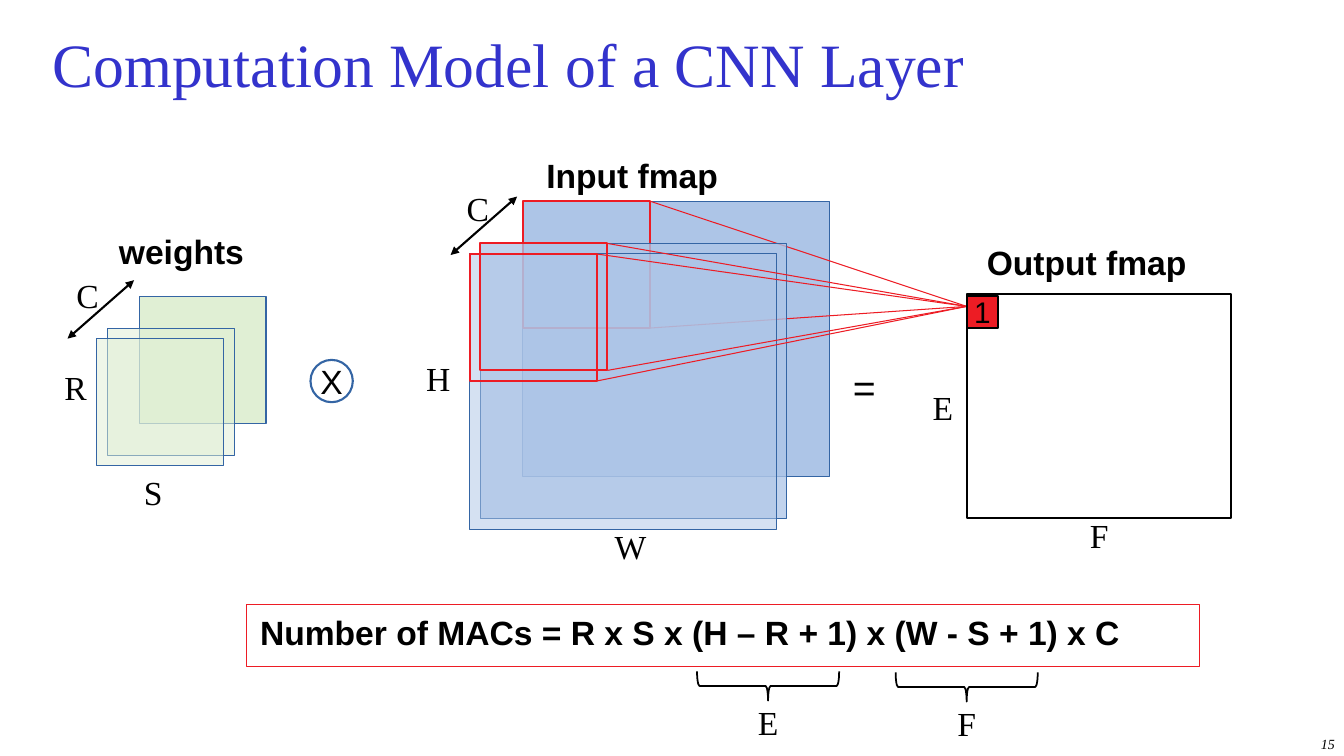
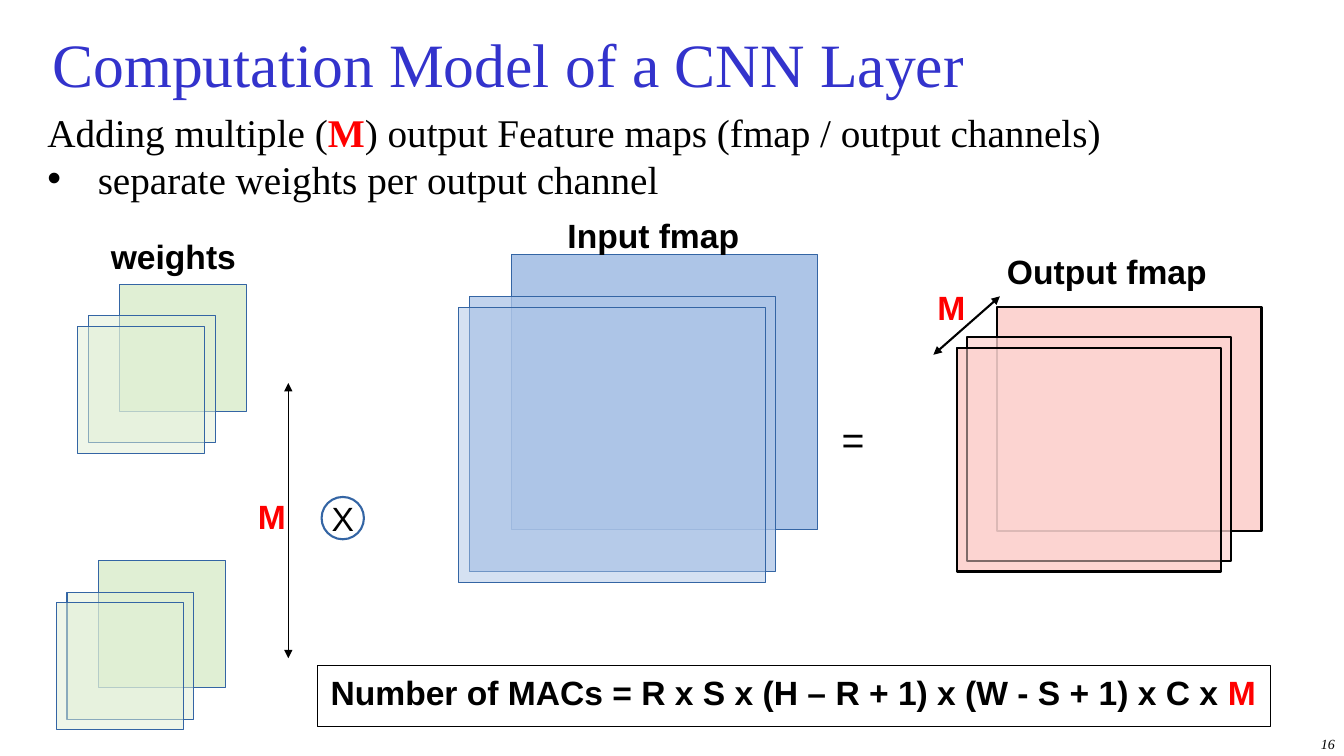
"""Builds two slides on the computation model of a convolutional layer."""
from lxml.etree import SubElement
from pptx import Presentation
from pptx.dml.color import RGBColor
from pptx.enum.shapes import MSO_CONNECTOR, MSO_SHAPE
from pptx.enum.text import MSO_ANCHOR, MSO_AUTO_SIZE, PP_ALIGN
from pptx.oxml.ns import qn
from pptx.util import Inches, Pt

BLACK, WHITE, RED, STRONG_RED = "000000", "FFFFFF", "ED1C24", "FF0000"
TITLE_BLUE, EDGE_BLUE = "3333CC", "3465A4"
MAP_BLUE, WEIGHT_GREEN, OUTPUT_PINK = "ADC5E7", "E0EFD4", "FCD4D1"
SANS, SERIF = "Arial", "Times New Roman"
COLUMNS, ROWS = 133.33, 75
MAP_SIZE, WEIGHT_SIZE, OUTPUT_SIZE = (30.4, 27.3), (12.6, 12.6), (26.2, 22.2)
MAP_DEPTH, WEIGHT_DEPTH, OUTPUT_DEPTH, MIDDLE_DEPTH = 5.25, 4.2, 4.05, 1.05
TARGET = (95.9, 30.4)
FORMULA = "Number of MACs = R x S x (H – R + 1) x (W - S + 1) x C"


def cells(*counts):
    """Turn counts of grid cells into lengths."""
    return [Inches(count / 10) for count in counts]


def paint(target, color):
    """Give a fill or font a solid colour."""
    if hasattr(target, "solid"):
        target.solid()
        target.fore_color.rgb = RGBColor.from_string(color)
    else:
        target.color.rgb = RGBColor.from_string(color)


def layers(left, top, depth):
    """List the corners of three stacked sheets from back to front."""
    return [(left + shift, top - shift) for shift in (depth, MIDDLE_DEPTH, 0)]


class Sketch:
    """Holds the deck, its style and the current page."""

    def __init__(self):
        self.deck = Presentation()
        self.deck.slide_width, self.deck.slide_height = cells(COLUMNS, ROWS)
        self.page = None

    def start(self, layout, title, number):
        """Add a page with its title and page number."""
        self.page = self.deck.slides.add_slide(self.deck.slide_layouts[layout])
        holder = self.page.shapes.title
        self.place(holder, 4.2, 2.5, 125.3, 7.5)
        holder.text_frame.vertical_anchor = MSO_ANCHOR.MIDDLE
        holder.text_frame.auto_size = MSO_AUTO_SIZE.NONE
        self.set_spans(holder.text_frame.paragraphs[0], [(title, TITLE_BLUE)], SERIF, 44)
        self.text((105.6, 72.5, 27.8, 2.5), [(str(number), BLACK)], SERIF, 10,
                  align=PP_ALIGN.RIGHT, italic=True)

    def place(self, shape, *area):
        """Move a shape to an area of the grid."""
        shape.left, shape.top, shape.width, shape.height = cells(*area)

    def set_spans(self, para, spans, face, size, align=PP_ALIGN.LEFT, bold=False, italic=False):
        """Fill a paragraph with coloured spans."""
        para.alignment = align
        font = para.font
        font.name, font.size, font.bold, font.italic = face, Pt(size), bold, italic
        paint(font, spans[0][1])
        for words, color in spans:
            span = para.add_run()
            span.text = words
            if color != spans[0][1]:
                paint(span.font, color)

    def text(self, area, spans, face=SERIF, size=24, **style):
        """Add a text box."""
        box = self.page.shapes.add_textbox(*cells(*area))
        self.fill_frame(box, spans, face, size, **style)

    def fill_frame(self, box, spans, face, size, **style):
        """Set the insets and text of a box."""
        frame = box.text_frame
        frame.word_wrap = True
        frame.vertical_anchor = MSO_ANCHOR.TOP
        if face == SANS:
            side, end = cells(1.3, 0.7)
            frame.margin_left = side
            frame.margin_right = side if style.get("align") else 0
            frame.margin_top = frame.margin_bottom = end
        self.set_spans(frame.paragraphs[0], spans, face, size, **style)

    def label(self, area, words, color=BLACK, **style):
        """Add a bold label."""
        self.text(area, [(words, color)], SANS, bold=True, **style)

    def dimension(self, left, top, letter, width=4.7, align=PP_ALIGN.LEFT):
        """Add the letter of a dimension."""
        self.text((left, top, width, 5), [(letter, BLACK)], align=align)

    def shape(self, area, fill=None, edge=EDGE_BLUE, weight=0.75,
              kind=MSO_SHAPE.RECTANGLE, opacity=100):
        """Add a preset shape."""
        shape = self.page.shapes.add_shape(kind, *cells(*area))
        shape.shadow.inherit = False
        if fill:
            paint(shape.fill, fill)
        else:
            shape.fill.background()
        if opacity < 100:
            color = shape.element.spPr.find(qn("a:solidFill"))[0]
            SubElement(color, qn("a:alpha")).set("val", str(opacity * 1000))
        paint(shape.line.fill, edge)
        shape.line.width = Pt(weight)
        return shape

    def badge(self, area, words, size, **style):
        """Add a small shape with centred text."""
        frame = self.shape(area, weight=1.5, **style).text_frame
        frame.word_wrap = False
        frame.vertical_anchor = MSO_ANCHOR.MIDDLE
        frame.margin_left = frame.margin_right = 0
        frame.margin_top = frame.margin_bottom = 0
        self.set_spans(frame.paragraphs[0], [(words, BLACK)], SANS, size, align=PP_ALIGN.CENTER)

    def stack(self, corners, size, fill, opacities, **style):
        """Draw sheets from back to front."""
        for corner, opacity in zip(corners, opacities):
            self.shape((*corner, *size), fill, opacity=opacity, **style)

    def line(self, start, end, color=BLACK, weight=0.75, arrows=False):
        """Draw a line, with arrowheads at both ends if asked."""
        line = self.page.shapes.add_connector(MSO_CONNECTOR.STRAIGHT, *cells(*start, *end))
        paint(line.line.fill, color)
        line.line.width = Pt(weight)
        properties = line.element.spPr
        if arrows:
            for tag in ("a:headEnd", "a:tailEnd"):
                SubElement(properties.find(qn("a:ln")), qn(tag)).set("type", "triangle")
        SubElement(properties, qn("a:effectLst"))

    def depth_arrow(self, left, bottom):
        """Draw the slanted arrow along a stack."""
        self.line((left, bottom), (left + 6.6, bottom - 5.8), weight=1.5, arrows=True)

    def window(self, left, top):
        """Outline a filter window and project it on the output."""
        width, height = WEIGHT_SIZE
        self.shape((left, top, width, height), edge=RED, weight=1.5)
        for corner_top in (top, top + height):
            self.line((left + width, corner_top), TARGET, RED)

    def weights(self, left, top):
        """Draw one stack of weights."""
        self.stack(layers(left, top, WEIGHT_DEPTH), WEIGHT_SIZE, WEIGHT_GREEN, (100, 50, 50))

    def operators(self, times, equals):
        """Add the convolution and equals signs."""
        self.badge((*times, 4.2, 4.2), "X", 24, fill=WHITE, kind=MSO_SHAPE.OVAL)
        self.text((*equals, 4.2, 5.6), [("=", BLACK)], SANS, 28)

    def formula(self, left, top, spans, edge):
        """Add the framed formula."""
        box = self.shape((left, top, 94.5, 6.1), edge=edge)
        self.fill_frame(box, spans, SANS, 24, bold=True)

    def brace(self, center, top, letter):
        """Add a brace below the formula and its letter."""
        brace = self.shape((center - 1.45, top, 2.9, 14.1), edge=BLACK, weight=1.25,
                           kind=MSO_SHAPE.LEFT_BRACE)
        brace.rotation = 270
        self.dimension(center - 2, top + 8.1, letter, 4, PP_ALIGN.CENTER)

    def body(self, area, lead, item):
        """Fill the body with a lead line and one bullet."""
        holder = self.page.placeholders[1]
        self.place(holder, *area)
        frame = holder.text_frame
        frame.auto_size = MSO_AUTO_SIZE.NONE
        frame.margin_left, frame.margin_top = cells(1.3, 0.7)
        for para, spans, indent in ((frame.paragraphs[0], lead, 0),
                                    (frame.add_paragraph(), item, Inches(0.5))):
            para.space_before = Pt(0)
            properties = para._p.get_or_add_pPr()
            properties.set("marL", str(indent))
            properties.set("indent", str(-indent))
            if indent:
                SubElement(properties, qn("a:buChar")).set("char", "•")
            else:
                SubElement(properties, qn("a:buNone"))
            self.set_spans(para, spans, SERIF, 28)
        for span in frame.paragraphs[0].runs:
            span.font.bold = span.text == "M"


def single_output(sketch):
    """Build the page with one output map."""
    sketch.start(5, "Computation Model of a CNN Layer", 15)
    corners = layers(46.6, 25.2, MAP_DEPTH)
    sketch.stack(corners[:1], MAP_SIZE, MAP_BLUE, (100,))
    sketch.window(*corners[0])
    sketch.stack(corners[1:], MAP_SIZE, MAP_BLUE, (75, 50))
    for corner in corners[1:]:
        sketch.window(*corner)
    sketch.label((52.9, 14.7, 19.7, 5), "Input fmap")
    sketch.weights(9.6, 33.6)
    sketch.label((9.6, 22.2, 16.8, 5), "weights", align=PP_ALIGN.CENTER)
    sketch.operators((30.8, 35.7), (83.3, 35.3))
    sketch.shape((95.9, 29.2, *OUTPUT_SIZE), WHITE, BLACK, 1.5)
    sketch.label((96.6, 23.3, 22.5, 5), "Output fmap")
    sketch.badge((95.9, 29.4, 3.1, 3.1), "1", 21.3, fill=RED, edge=BLACK)
    sketch.formula(24.5, 60, [(FORMULA, BLACK)], RED)
    for left, top, letter in ((5.4, 35.9, "R"), (13.3, 46.3, "S"), (6.6, 26.8, "C"),
                              (41.3, 35, "H"), (60, 51.7, "W"), (45.3, 18.2, "C")):
        sketch.dimension(left, top, letter)
    for left, top, letter in ((91.2, 37.9, "E"), (106.7, 50.6, "F")):
        sketch.dimension(left, top, letter, align=PP_ALIGN.CENTER)
    sketch.depth_arrow(6.7, 33.6)
    sketch.depth_arrow(44.7, 25.3)
    sketch.brace(76.2, 61, "E")
    sketch.brace(95.9, 61.1, "F")


def many_outputs(sketch):
    """Build the page with several output maps."""
    sketch.start(1, "Computation Model of a CNN Layer", 16)
    sketch.body((3.4, 10, 119.1, 8.8),
                [("Adding multiple (", BLACK), ("M", STRONG_RED),
                 (") output Feature maps (fmap / output channels)", BLACK)],
                [("separate weights per output channel", BLACK)])
    sketch.stack(layers(45.5, 30.5, MAP_DEPTH), MAP_SIZE, MAP_BLUE, (100, 75, 50))
    sketch.label((55, 20.6, 19.7, 5), "Input fmap")
    sketch.operators((31.9, 49.3), (82.2, 40.5))
    corners = layers(94.9, 34.5, OUTPUT_DEPTH)
    sketch.stack(corners[2:], OUTPUT_SIZE, OUTPUT_PINK, (100,))
    sketch.stack(corners, OUTPUT_SIZE, OUTPUT_PINK, (100, 75, 50), edge=BLACK, weight=1.5)
    sketch.label((98.6, 24.2, 22.5, 5), "Output fmap")
    sketch.line((28.6, 38), (28.6, 65.3), arrows=True)
    for left, top in ((24.3, 48.5), (91.7, 27.8)):
        sketch.label((left, top, 5.4, 5), "M", STRONG_RED)
    sketch.weights(7.7, 32.4)
    sketch.weights(5.6, 59.8)
    sketch.label((8.8, 22.7, 16.8, 5), "weights", align=PP_ALIGN.CENTER)
    sketch.formula(31.5, 66, [(FORMULA + " x ", BLACK), ("M", STRONG_RED)], BLACK)
    sketch.depth_arrow(92.6, 35.2)


def main():
    """Build and save the deck."""
    sketch = Sketch()
    single_output(sketch)
    many_outputs(sketch)
    sketch.deck.save("out.pptx")


if __name__ == "__main__":
    main()
